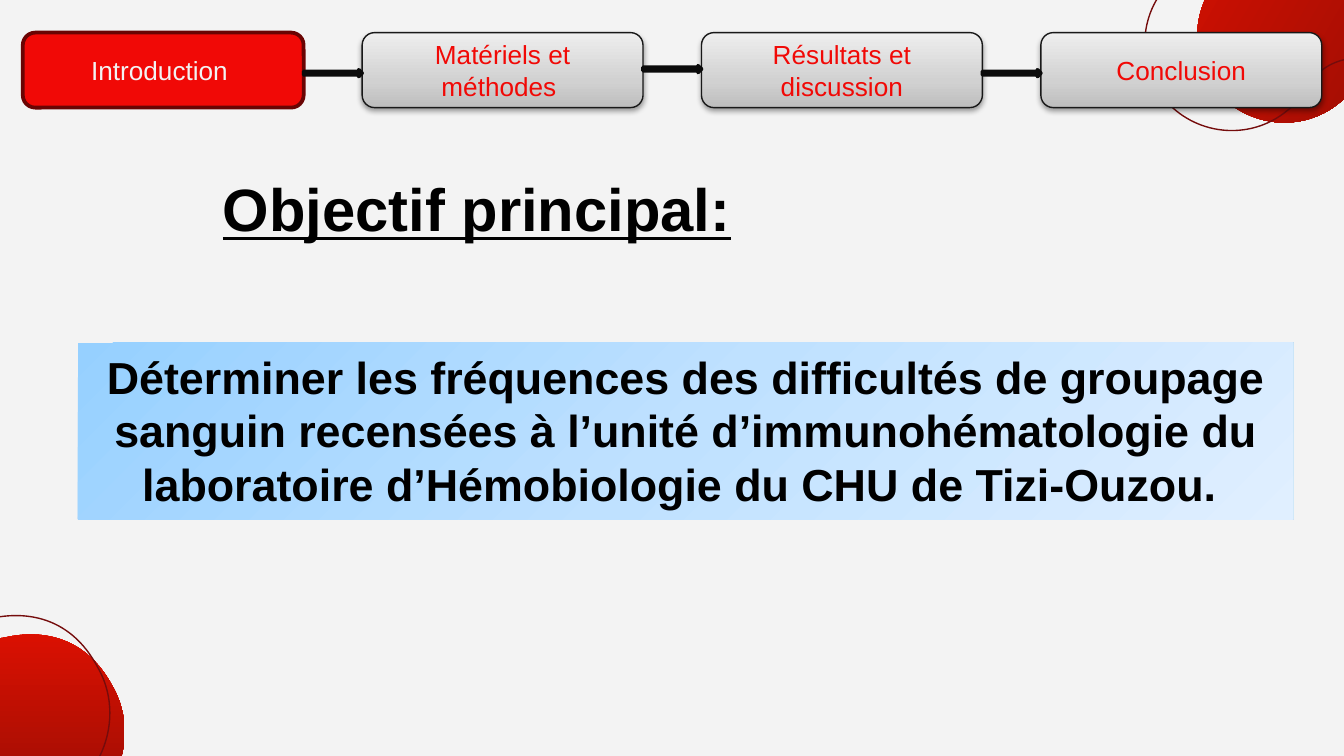
from lxml import etree
from pptx import Presentation
from pptx.dml.color import RGBColor
from pptx.enum.shapes import MSO_SHAPE as SHAPE
from pptx.enum.text import MSO_ANCHOR as ANCHOR, PP_ALIGN as ALIGN
from pptx.oxml import parse_xml
from pptx.oxml.ns import nsdecls, qn
from pptx.util import Pt


def rgb(hex_str):
    return RGBColor.from_string(hex_str)


def set_gradient(sp, stops, angle):
    """Fill with (percent, colour) stops; the angle runs clockwise."""
    sp.fill.gradient()
    sp.fill.gradient_angle = (360 - angle) % 360
    gs_list = sp._element.spPr.find(qn("a:gradFill")).find(qn("a:gsLst"))
    for gs in list(gs_list):
        gs_list.remove(gs)
    for pos, color in stops:
        gs = etree.SubElement(gs_list, qn("a:gs"), pos=str(pos * 1000))
        etree.SubElement(gs, qn("a:srgbClr"), val=color)


prs = Presentation()
prs.slide_width, prs.slide_height = Pt(720), Pt(405)
s = prs.slides.add_slide(prs.slide_layouts[6])
s.background.fill.solid()
s.background.fill.fore_color.rgb = rgb("F3F3F3")

# Blob outline around its centre: the start, then three points per Bezier curve
blob = [
    (-7.6, -79.2),
    (-11.9, -82.8), (-16.9, -85.7), (-22.7, -87.1),
    (-45, -95), (-69.5, -82.8), (-78.1, -61.2),
    (-86.8, -38.2), (-75.2, -12.2), (-52.2, -3.6),
    (-47.2, -1.4), (-42.1, -0.7), (-36.4, -0.7),
    (-27, -0.7), (-18.4, 3.6), (-12.6, 11.5),
    (-11.9, 12.2), (-11.9, 12.2), (-11.2, 13),
    (-1.8, 24.5), (4, 38.9), (4.7, 54),
    (4.7, 60.5), (6.1, 66.2), (9, 71.3),
    (19.1, 88.6), (40, 95.8), (58, 87.1),
    (78.1, 78.5), (86, 54.7), (76.7, 35.3),
    (70.9, 25.2), (70.9, 13), (76, 2.2),
    (83.2, -12.2), (83.9, -30.2), (75.2, -45.4),
    (60.1, -74.2), (34.9, -75.6), (18.4, -72),
    (9, -69.8), (-0.4, -72.7), (-7.6, -79.2),
]

# Corner blobs: centre x, centre y, scale, rotation, filled
for cx, cy, scale, rotation, filled in [
    (748.8, 9.7, 1.05, 300, True),
    (720.7, 14, 1.05, 300, False),
    (-14.8, 413.3, 1, 0, True),
    (-22.7, 403.2, 1, 0, False),
]:
    points = [(Pt(cx + scale * x), Pt(cy + scale * y)) for x, y in blob]
    builder = s.shapes.build_freeform(*points[0])
    builder.add_line_segments(points[1:], close=True)
    sp = builder.convert_to_shape()
    # Turn every three line segments into one curve
    lines = list(sp._element.spPr.iter(qn("a:lnTo")))
    for a, b, c in zip(lines[::3], lines[1::3], lines[2::3]):
        curve = etree.Element(qn("a:cubicBezTo"))
        a.addprevious(curve)
        for line in (a, b, c):
            curve.append(line[0])
            line.getparent().remove(line)
    sp.shadow.inherit = False
    sp.rotation = rotation
    if filled:
        set_gradient(sp, [(0, "E91101"), (100, "630B05")], 90)
        sp.line.fill.background()
    else:
        sp.fill.background()
        sp.line.color.rgb = rgb("750C0C")
        sp.line.width = Pt(0.75)

# Objective panel
sp = s.shapes.add_shape(SHAPE.RECTANGLE, Pt(41.8), Pt(183.6), Pt(651), Pt(94.5))
sp.shadow.inherit = False
set_gradient(sp, [(0, "96D0FF"), (50, "BFE1FF"), (100, "E0EFFF")], 45)
sp.line.fill.background()
tf = sp.text_frame
tf.word_wrap = True
tf.vertical_anchor = ANCHOR.TOP
p = tf.paragraphs[0]
p.text = ("Déterminer les fréquences des difficultés de groupage sanguin recensées à "
          "l’unité d’immunohématologie du laboratoire d’Hémobiologie du CHU de Tizi-Ouzou. ")
p.alignment = ALIGN.CENTER
p.font.name, p.font.size, p.font.bold = "Arial", Pt(24), True
p.font.color.rgb = rgb("000000")

# Heading
tf = s.shapes.add_textbox(Pt(112.3), Pt(88.6), Pt(466), Pt(46)).text_frame
tf.word_wrap = True
p = tf.paragraphs[0]
p.text = "Objectif principal:"
p.font.name, p.font.size, p.font.bold, p.font.underline = "Arial", Pt(32), True, True
p.font.color.rgb = rgb("000000")

# Navigation steps, the current one in red
STEP_X, STEP_Y, STEP_W, STEP_H, PITCH = 12.2, 17.5, 150.5, 40.2, 181.8
steps = ["Introduction ", "Matériels et méthodes ", "Résultats et discussion", "Conclusion"]
for i, label in enumerate(steps):
    current = i == 0
    sp = s.shapes.add_shape(SHAPE.ROUNDED_RECTANGLE, Pt(STEP_X + i * PITCH), Pt(STEP_Y),
                            Pt(STEP_W), Pt(STEP_H))
    sp.shadow.inherit = False
    if current:
        sp.fill.solid()
        sp.fill.fore_color.rgb = rgb("F10906")
    else:
        set_gradient(sp, [(0, "BDBDBD"), (35, "D1D1D1"), (100, "EEEEEE")], 270)
        sp._element.spPr.find(qn("a:effectLst")).append(parse_xml(
            f'<a:outerShdw {nsdecls("a")} blurRad="{Pt(3.1)}" dist="{Pt(1.6)}" dir="5400000" '
            'rotWithShape="0"><a:srgbClr val="000000"><a:alpha val="38000"/></a:srgbClr>'
            '</a:outerShdw>'))
    sp.line.color.rgb = rgb("6A0403" if current else "181818")
    sp.line.width = Pt(2 if current else 0.75)
    tf = sp.text_frame
    tf.word_wrap = True
    tf.vertical_anchor = ANCHOR.MIDDLE
    p = tf.paragraphs[0]
    p.text = label
    p.alignment = ALIGN.CENTER
    p.font.name, p.font.size = "Arial", Pt(14)
    p.font.color.rgb = rgb("F3F3F3" if current else "F10906")

# Arrows between the steps
for i, y in enumerate([37.4, 35.2, 37.4]):
    sp = s.shapes.add_shape(SHAPE.RIGHT_ARROW, Pt(STEP_X + i * PITCH + STEP_W), Pt(y),
                            Pt(PITCH - STEP_W), Pt(3.6))
    sp.shadow.inherit = False
    sp.fill.solid()
    sp.fill.fore_color.rgb = rgb("191919")
    sp.line.color.rgb = rgb("0B0B0B")
    sp.line.width = Pt(2)

prs.save("out.pptx")
